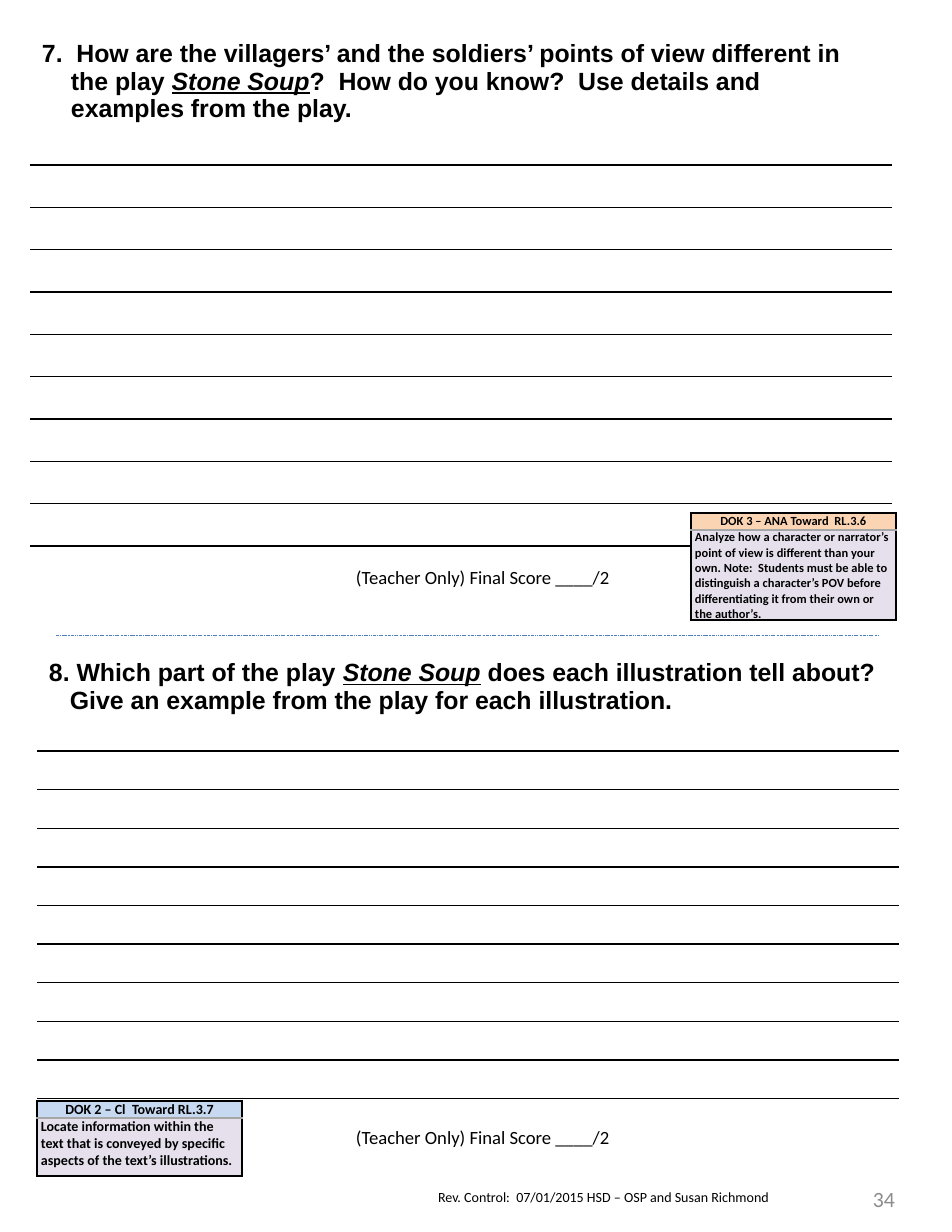
"""Build a reading worksheet page with two questions and ruled answer lines."""
from dataclasses import dataclass

from lxml.etree import SubElement
from pptx import Presentation
from pptx.dml.color import RGBColor as Rgb
from pptx.enum.dml import MSO_LINE as Dash
from pptx.enum.shapes import MSO_CONNECTOR as Conn
from pptx.enum.text import MSO_ANCHOR as Anchor, PP_ALIGN as Align
from pptx.oxml.ns import qn
from pptx.util import Emu, Pt

SCALE = 914400 // 112
PLAIN = "{2D5ABB26-0587-4C30-8999-92F81FD0307C}"


@dataclass(frozen=True)
class Theme:
    ink: str = "000000"
    gray: str = "8C8C8C"
    rule: str = "A6A6A6"
    blue: str = "4B7EBC"
    peach: str = "FBD4B4"
    sky: str = "C6D9F1"
    lilac: str = "E6E0EC"
    head: str = "Arial"
    body: str = "Calibri"
    ask: int = 16
    page: int = 14
    score: int = 12
    foot: int = 9
    note: int = 8


T = Theme()


def px(n):
    return Emu(n * SCALE)


def add_run(para, text, size, face=T.body, color=T.ink, bold=False, title=False):
    run = para.add_run()
    run.text = text
    font = run.font
    font.name, font.size, font.bold = face, Pt(size), bold
    font.italic = font.underline = title
    font.color.rgb = Rgb.from_string(color)


def add_text(slide, box, text, size, color=T.ink, align=Align.LEFT, anchor=Anchor.TOP):
    frame = slide.shapes.add_textbox(*map(px, box)).text_frame
    frame.word_wrap = True
    frame.vertical_anchor = anchor
    para = frame.paragraphs[0]
    para.alignment = align
    add_run(para, text, size, color=color)


def add_edge(cell, **sides):
    props = cell._tc.get_or_add_tcPr()
    for side in "LRTB":
        if side in sides:
            line = SubElement(props, qn(f"a:ln{side}"), w=str(Pt(1)))
            fill = SubElement(line, qn("a:solidFill"))
            SubElement(fill, qn("a:srgbClr"), val=sides[side])


def set_pad(cell, side, top):
    cell.margin_left = cell.margin_right = px(side)
    cell.margin_top = cell.margin_bottom = px(top)


def add_grid(slide, x, y, wide, tall):
    frame = slide.shapes.add_table(len(tall), 1, px(x), px(y), px(wide), sum(tall))
    grid = frame.table
    grid.first_row = grid.horz_banding = False
    grid._tbl.tblPr.find(qn("a:tableStyleId")).text = PLAIN
    for row, high in zip(grid.rows, tall):
        row.height = high
    return [row.cells[0] for row in grid.rows]


def add_ask(slide, x, y, first, span, hang, parts, lines=10):
    gap = px(span) // (lines - 1)
    cells = add_grid(slide, x, y, 862, [px(first)] + [gap] * (lines - 1))
    for cell in cells:
        set_pad(cell, 0, 0)
        add_edge(cell, B=T.ink)
        cell.fill.background()
    set_pad(cells[0], 12, 6)
    para = cells[0].text_frame.paragraphs[0]
    props = para._p.get_or_add_pPr()
    props.set("marL", str(px(hang)))
    props.set("indent", str(-px(hang)))
    for text, title in parts:
        add_run(para, text, T.ask, T.head, bold=True, title=title)


def add_note(slide, x, y, high, fill, size, head, body):
    top, low = add_grid(slide, x, y, 205, [px(17), px(high - 17)])
    add_edge(top, L=T.ink, R=T.ink, T=T.ink, B=T.rule)
    add_edge(low, L=T.ink, R=T.ink, T=T.rule, B=T.ink)
    for cell, text, tint in ((top, head, fill), (low, body, T.lilac)):
        set_pad(cell, 4, 0)
        cell.fill.solid()
        cell.fill.fore_color.rgb = Rgb.from_string(tint)
        add_run(cell.text_frame.paragraphs[0], text, size, bold=True)
    top.vertical_anchor = Anchor.MIDDLE
    top.text_frame.paragraphs[0].alignment = Align.CENTER


def add_split(slide, x, y, end):
    line = slide.shapes.add_connector(Conn.STRAIGHT, px(x), px(y), px(end), px(y))
    line.line.color.rgb = Rgb.from_string(T.blue)
    line.line.width = Pt(0.25)
    line.line.dash_style = Dash.DASH_DOT_DOT
    SubElement(line._element.spPr, qn("a:effectLst"))


def main():
    deck = Presentation()
    deck.slide_width, deck.slide_height = px(952), px(1232)
    slide = deck.slides.add_slide(deck.slide_layouts[6])
    add_text(slide, (427, 1183, 476, 29),
             "Rev. Control:  07/01/2015 HSD – OSP and Susan Richmond", T.foot)
    add_text(slide, (803, 1166, 103, 66), "34", T.page, T.gray,
             Align.RIGHT, Anchor.MIDDLE)
    add_ask(slide, 30, 34, 131, 381, 29, [
        ("7.  How are the villagers’ and the soldiers’ points of view "
         "different in the play ", False),
        ("Stone Soup", True),
        ("?  How do you know?  Use details and examples from the play.", False)])
    add_ask(slide, 37, 653, 98, 348, 21, [
        ("8. Which part of the play ", False),
        ("Stone Soup", True),
        (" does each illustration tell about?  Give an example from the play "
         "for each illustration.", False)])
    add_note(slide, 691, 513, 107, T.peach, T.note, "DOK 3 – ANA Toward  RL.3.6",
             "Analyze how a character or narrator’s point of view is different "
             "than your own. Note:  Students must be able to distinguish a "
             "character’s POV before differentiating it from their own or the "
             "author’s.")
    add_note(slide, 37, 1101, 75, T.sky, T.foot, "DOK 2 – Cl  Toward RL.3.7",
             "Locate information within the text that is conveyed by specific "
             "aspects of the text’s illustrations.")
    add_split(slide, 56, 635, 878)
    for y in (560, 1120):
        add_text(slide, (345, y, 345, 34), "(Teacher Only) Final Score ____/2", T.score)
    deck.save("out.pptx")


if __name__ == "__main__":
    main()
